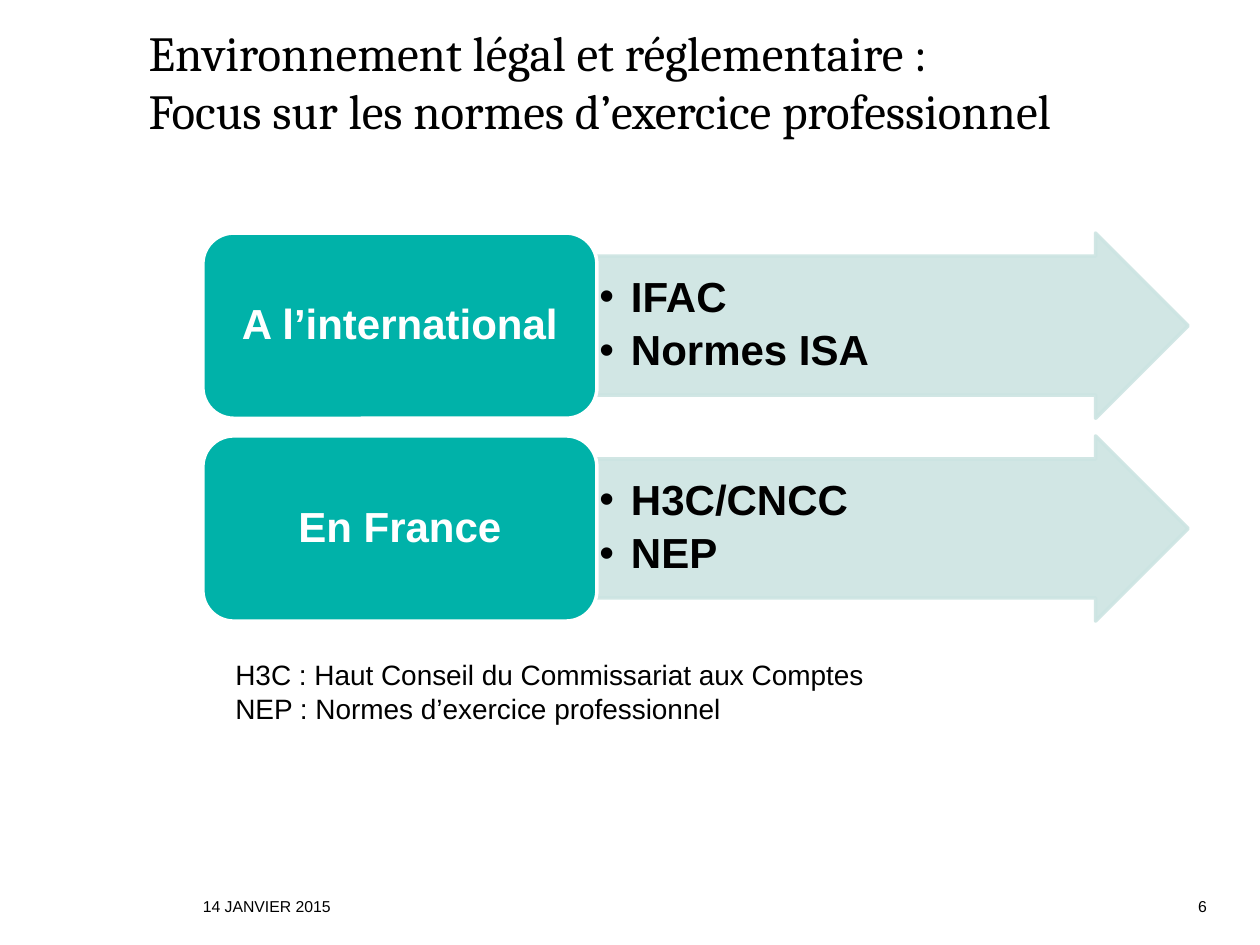
from lxml.etree import SubElement
from pptx import Presentation
from pptx.dml.color import RGBColor
from pptx.enum.shapes import MSO_SHAPE as Shape
from pptx.enum.text import MSO_ANCHOR as Anchor, MSO_AUTO_SIZE as AutoSize, PP_ALIGN as Align
from pptx.oxml.ns import qn
from pptx.util import Inches, Pt

TEAL, PALE, WHITE, BLACK = "00B2A9", "CCE4E2", "FFFFFF", "000000"
TOPICS = [
    ("A l’international", ["IFAC", "Normes ISA"]),
    ("En France", ["H3C/CNCC", "NEP"]),
]


def color(hex_code):
    """Turn a hex string into a colour."""
    return RGBColor.from_string(hex_code)


def place(part, left, top, width, height):
    """Move and size a part, in inches."""
    part.left, part.top = Inches(left), Inches(top)
    part.width, part.height = Inches(width), Inches(height)


def write(part, text, size, ink=BLACK, font="Arial", bold=False,
          align=Align.LEFT, anchor=Anchor.TOP, inset=None):
    """Set and format the text of a part."""
    frame = part.text_frame
    frame.text = text
    frame.word_wrap = True
    frame.auto_size = AutoSize.NONE
    frame.vertical_anchor = anchor
    if inset is not None:
        frame.margin_left = frame.margin_right = Inches(inset)
        frame.margin_top = frame.margin_bottom = Inches(inset)
    for paragraph in frame.paragraphs:
        paragraph.alignment = align
        for run in paragraph.runs:
            run.font.size, run.font.name, run.font.bold = Pt(size), font, bold
            run.font.color.rgb = color(ink)


def add_block(slide, kind, box, fill, line, opacity=100):
    """Add a filled and outlined shape."""
    block = slide.shapes.add_shape(kind, *map(Inches, box))
    block.shadow.inherit = False
    block.fill.solid()
    block.fill.fore_color.rgb = color(fill)
    block.line.color.rgb = color(line)
    block.line.width = Pt(2)
    if opacity < 100:
        for tint in block._element.spPr.iter(qn("a:srgbClr")):
            SubElement(tint, qn("a:alpha"), val=str(opacity * 1000))
    return block


def add_bullet(paragraph):
    """Give a paragraph a hanging round bullet."""
    props = paragraph._p.get_or_add_pPr()
    props.set("marL", str(Inches(0.25)))
    props.set("indent", str(-Inches(0.25)))
    SubElement(props, qn("a:buFont"), typeface="Arial")
    SubElement(props, qn("a:buChar"), char="•")


def add_topic(slide, left, top, width, height, label, items):
    """Add a label and the arrow that lists its items."""
    label_width = width * 0.4
    arrow = add_block(slide, Shape.RIGHT_ARROW,
                      (left + label_width, top, width - label_width, height), PALE, PALE, 90)
    arrow.adjustments[0], arrow.adjustments[1] = 0.75, 0.5
    write(arrow, "\n".join(items), 24, bold=True, anchor=Anchor.MIDDLE, inset=0.02)
    for paragraph in arrow.text_frame.paragraphs:
        paragraph.line_spacing = 0.9
        paragraph.space_after = Pt(4.5)
        add_bullet(paragraph)
    tag = add_block(slide, Shape.ROUNDED_RECTANGLE, (left, top, label_width, height), TEAL, WHITE)
    write(tag, label, 24, WHITE, bold=True, align=Align.CENTER, anchor=Anchor.MIDDLE)
    tag.text_frame.paragraphs[0].line_spacing = 0.9


def add_topics(slide, left, top, width, height, gap):
    """Stack the topics with equal gaps."""
    row_height = (height - gap * (len(TOPICS) - 1)) / len(TOPICS)
    for row, (label, items) in enumerate(TOPICS):
        add_topic(slide, left, top + row * (row_height + gap), width, row_height, label, items)


def add_title(slide, *box):
    """Place and format the title."""
    title = slide.shapes.title
    place(title, *box)
    write(title, "Environnement légal et réglementaire :\vFocus sur les normes d’exercice professionnel",
          28, font="Cambria", anchor=Anchor.BOTTOM, inset=0)


def add_glossary(slide, *box):
    """Add the meaning of the abbreviations."""
    glossary = slide.shapes.add_textbox(*map(Inches, box))
    write(glossary, "H3C : Haut Conseil du Commissariat aux Comptes\n"
                    "NEP : Normes d’exercice professionnel", 16)


def add_footer(slide, left, top, width, height):
    """Add the date at the left and the page number at the right."""
    number_width = 0.8
    date = slide.shapes.add_textbox(*map(Inches, (left, top, width - number_width, height)))
    write(date, "14 JANVIER 2015", 9, anchor=Anchor.BOTTOM, inset=0)
    number = slide.shapes.add_textbox(
        *map(Inches, (left + width - number_width, top, number_width, height)))
    write(number, "6", 9, align=Align.RIGHT, anchor=Anchor.BOTTOM, inset=0)


def main():
    """Build the slide and save it."""
    deck = Presentation()
    deck.slide_width, deck.slide_height = Inches(10), Inches(7.5)
    slide = deck.slides.add_slide(deck.slide_layouts[5])
    add_title(slide, 1.18, 0, 8.25, 1.11)
    add_topics(slide, 1.61, 1.85, 7.82, 3.08, 0.14)
    add_glossary(slide, 1.77, 5.17, 6.14, 0.64)
    add_footer(slide, 1.61, 7.07, 7.97, 0.2)
    deck.save("out.pptx")


if __name__ == "__main__":
    main()
